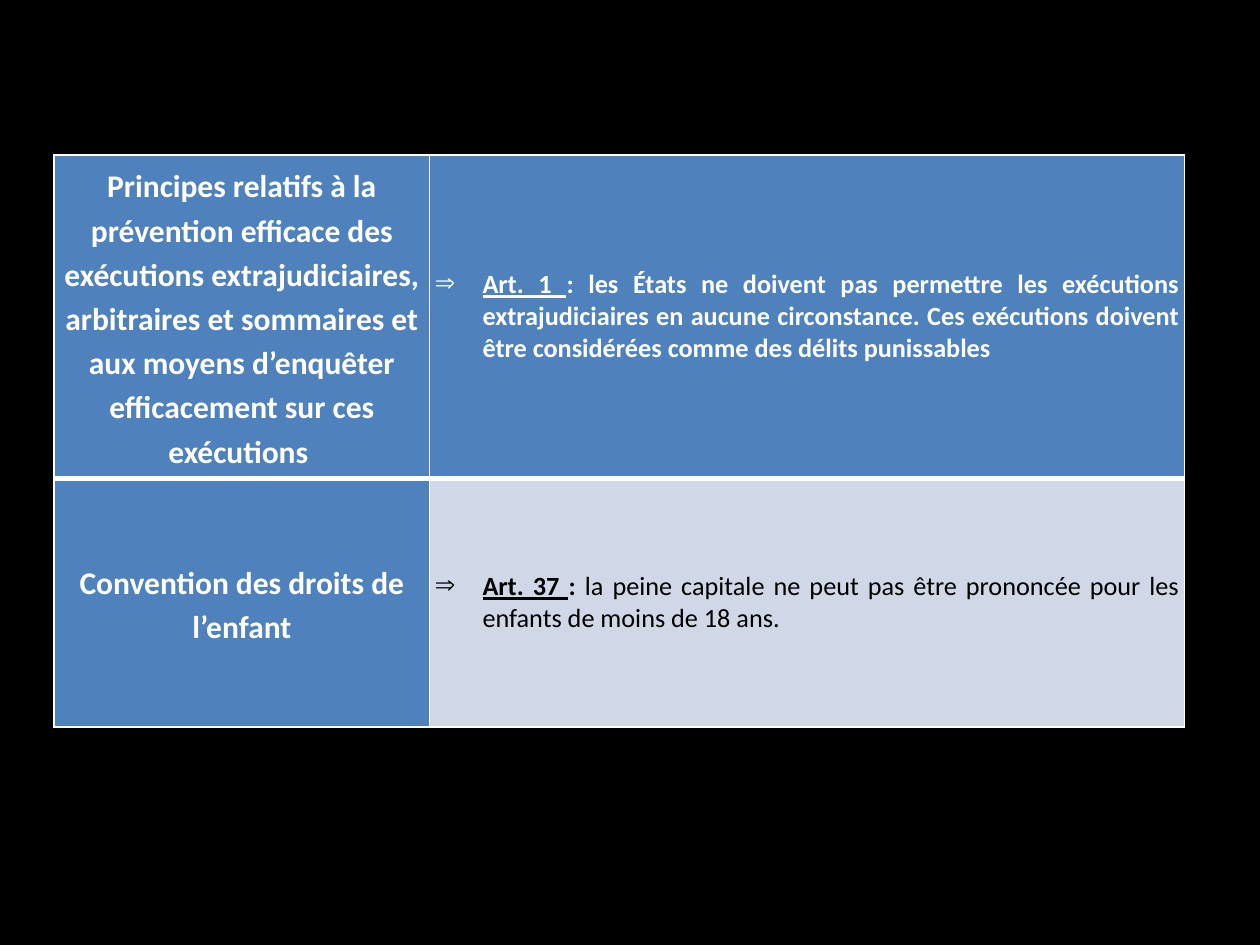
import pptx
import pptx.util
import pptx.dml.color
import pptx.enum.text
import pptx.oxml.ns
import lxml.etree

Inches, Pt = pptx.util.Inches, pptx.util.Pt
ALIGN = pptx.enum.text.PP_ALIGN
HUES = {"back": "000000", "head": "4F81BD", "pale": "D0D8E8",
        "white": "FFFFFF", "black": "000000"}
COLS = (2.98, 5.99)
ROWS = [
    {
        "high": 2.57, "fill": "head", "ink": "white", "edge": 3,
        "name": "Principes relatifs à la prévention efficace des exécutions extrajudiciaires, "
                "arbitraires et sommaires et aux moyens d’enquêter efficacement sur ces exécutions ",
        "rule": [
            ("Art. 1 ", True, True),
            (": les États ne doivent pas permettre les exécutions extrajudiciaires en aucune "
             "circonstance. Ces exécutions doivent être considérées comme des délits punissables",
             True, False),
        ],
    },
    {
        "high": 1.97, "fill": "pale", "ink": "black", "edge": 1,
        "name": "Convention des droits de l’enfant",
        "rule": [
            ("Art. 37 ", True, True),
            (": ", True, False),
            ("la peine capitale ne peut pas être prononcée pour les enfants de moins de 18 ans.",
             False, False),
        ],
    },
]


def color(key):
    return pptx.dml.color.RGBColor.from_string(HUES[key])


def add_node(parent, tag, **attrs):
    return lxml.etree.SubElement(parent, pptx.oxml.ns.qn(tag), attrs)


def set_edges(cell, top, bottom):
    props = cell._tc.get_or_add_tcPr()
    for side, width in (("L", 1), ("R", 1), ("T", top), ("B", bottom)):
        line = add_node(props, f"a:ln{side}", w=str(Pt(width)))
        add_node(add_node(line, "a:solidFill"), "a:srgbClr", val=HUES["white"])


def style_cell(cell, fill, top, bottom):
    set_edges(cell, top, bottom)
    cell.fill.solid()
    cell.fill.fore_color.rgb = color(fill)
    cell.margin_left = cell.margin_right = Inches(0.04)
    cell.margin_top = cell.margin_bottom = 0
    cell.vertical_anchor = pptx.enum.text.MSO_ANCHOR.MIDDLE


def add_text(para, parts, size, ink):
    for text, bold, under in parts:
        run = para.add_run()
        run.text = text
        run.font.name = "Calibri"
        run.font.size = Pt(size)
        run.font.bold = bold
        run.font.underline = under
        run.font.color.rgb = color(ink)


def fill_name(cell, text):
    para = cell.text_frame.paragraphs[0]
    para.alignment = ALIGN.CENTER
    para.line_spacing = 1.15
    para.space_after = Pt(10)
    add_text(para, [(text, True, False)], 18, "white")


def fill_rule(cell, parts, ink):
    para = cell.text_frame.paragraphs[0]
    para.alignment = ALIGN.JUSTIFY
    props = para._p.get_or_add_pPr()
    props.set("marL", str(Inches(0.38)))
    props.set("indent", str(-Inches(0.38)))
    add_node(props, "a:buChar", char="⇒")
    add_text(para, parts, 15, ink)


def main():
    deck = pptx.Presentation()
    deck.slide_width, deck.slide_height = Inches(10), Inches(7.5)
    slide = deck.slides.add_slide(deck.slide_layouts[6])
    slide.background.fill.solid()
    slide.background.fill.fore_color.rgb = color("back")
    high = sum(row["high"] for row in ROWS)
    table = slide.shapes.add_table(len(ROWS), len(COLS), Inches(0.43), Inches(1.23),
                                   Inches(sum(COLS)), Inches(high)).table
    table.first_row = table.horz_banding = False
    for col, width in zip(table.columns, COLS):
        col.width = Inches(width)
    top = 1
    for i, row in enumerate(ROWS):
        table.rows[i].height = Inches(row["high"])
        name, rule = table.cell(i, 0), table.cell(i, 1)
        style_cell(name, "head", top, row["edge"])
        style_cell(rule, row["fill"], top, row["edge"])
        fill_name(name, row["name"])
        fill_rule(rule, row["rule"], row["ink"])
        top = row["edge"]
    deck.save("out.pptx")


if __name__ == "__main__":
    main()
